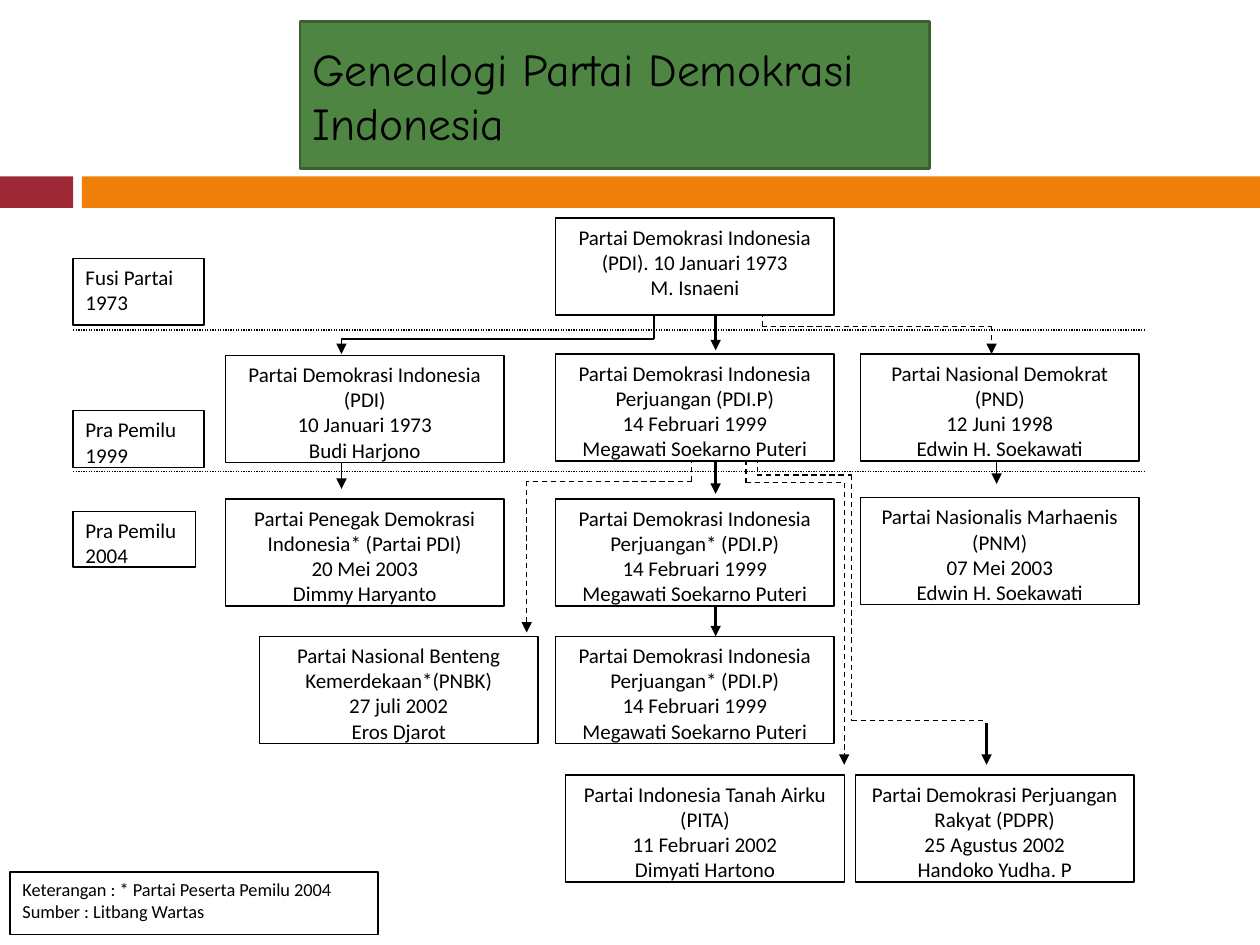
"""Build the genealogy slide of Partai Demokrasi Indonesia."""
from dataclasses import dataclass
from itertools import pairwise

from lxml import etree
from pptx import Presentation
from pptx.dml.color import RGBColor
from pptx.enum.dml import MSO_LINE
from pptx.enum.shapes import MSO_CONNECTOR, MSO_SHAPE
from pptx.enum.text import MSO_ANCHOR, PP_ALIGN
from pptx.oxml.ns import qn
from pptx.util import Inches, Pt

LEFT, CENTER = PP_ALIGN.LEFT, PP_ALIGN.CENTER
TOP, MIDDLE = MSO_ANCHOR.TOP, MSO_ANCHOR.MIDDLE
DASH, DOT = MSO_LINE.DASH, MSO_LINE.ROUND_DOT
RECTANGLE, STRAIGHT = MSO_SHAPE.RECTANGLE, MSO_CONNECTOR.STRAIGHT


@dataclass(frozen=True)
class Theme:
    """Colours, fonts, type sizes and line widths."""
    black: str = "000000"
    white: str = "FFFFFF"
    green: str = "4E8542"
    dark_green: str = "3A6231"
    red: str = "9F2936"
    orange: str = "F07F09"
    body_font: str = "Calibri"
    title_font: str = "Comic Neue"
    title_size: float = 26
    body_size: float = 12
    note_size: float = 10.5
    thin: float = 0.75
    title_line: float = 1.5
    thick: float = 1.75


THEME = Theme()


@dataclass(frozen=True)
class Box:
    """A rectangle with its paragraphs."""
    left: float
    top: float
    width: float
    height: float
    lines: tuple[str, ...] = ()
    fill: str = THEME.white
    outline: str | None = THEME.black
    weight: float = THEME.thin
    font: str = THEME.body_font
    size: float = THEME.body_size
    align: PP_ALIGN = LEFT
    anchor: MSO_ANCHOR = TOP
    space_after: float = 0


@dataclass(frozen=True)
class Route:
    """A chain of straight lines through points."""
    points: tuple[tuple[float, float], ...]
    weight: float = THEME.thin
    dash: MSO_LINE | None = None
    arrow: bool = True


def party(left: float, top: float, *lines: str, height: float = 0.85) -> Box:
    """Return the box of one party."""
    return Box(left, top, 2.21, height, lines, align=CENTER)


def label(top: float, width: float, height: float, text: str) -> Box:
    """Return the box of one period."""
    return Box(0.58, top, width, height, (text,), space_after=10)


def apply_format(target: object, values: dict) -> None:
    """Set each attribute of the target."""
    for name, value in values.items():
        setattr(target, name, value)


def add_box(slide, box: Box) -> None:
    """Draw a box with its text."""
    shape = slide.shapes.add_shape(
        RECTANGLE, *map(Inches, (box.left, box.top, box.width, box.height)))
    shape.shadow.inherit = False
    shape.fill.solid()
    shape.fill.fore_color.rgb = RGBColor.from_string(box.fill)
    if box.outline:
        shape.line.color.rgb = RGBColor.from_string(box.outline)
        shape.line.width = Pt(box.weight)
    else:
        shape.line.fill.background()
    frame = shape.text_frame
    apply_format(frame, {"word_wrap": True, "vertical_anchor": box.anchor})
    for index, text in enumerate(box.lines):
        paragraph = frame.add_paragraph() if index else frame.paragraphs[0]
        apply_format(paragraph, {"alignment": box.align,
                                 "space_after": Pt(box.space_after)})
        run = paragraph.add_run()
        run.text = text
        apply_format(run.font, {"name": box.font, "size": Pt(box.size)})
        run.font.color.rgb = RGBColor.from_string(THEME.black)


def add_route(slide, route: Route) -> None:
    """Draw a route, with the arrowhead on its last line."""
    for start, end in pairwise(route.points):
        connector = slide.shapes.add_connector(
            STRAIGHT, *map(Inches, (*start, *end)))
        connector.line.color.rgb = RGBColor.from_string(THEME.black)
        apply_format(connector.line, {"width": Pt(route.weight),
                                      "dash_style": route.dash})
        properties = connector.element.spPr
        etree.SubElement(properties, qn("a:effectLst"))
        if route.arrow and end == route.points[-1]:
            line = properties.find(qn("a:ln"))
            etree.SubElement(line, qn("a:tailEnd"), type="triangle")


LEFT_X, MIDDLE_X, RIGHT_X = 1.79, 4.41, 6.83
LEFT_AXIS, MIDDLE_AXIS = 2.71, 5.68
PDI = "Partai Demokrasi Indonesia"
PDIP = (f"{PDI} Perjuangan* (PDI.P)", "14 Februari 1999",
        "Megawati Soekarno Puteri")

HEADER = (
    Box(0, 1.4, 0.58, 0.25, fill=THEME.red, outline=None),
    Box(0.65, 1.4, 9.35, 0.25, fill=THEME.orange, outline=None),
    Box(2.38, 0.17, 5, 1.17, ("Genealogi Partai Demokrasi Indonesia",),
        THEME.green, THEME.dark_green, THEME.title_line, THEME.title_font,
        THEME.title_size, anchor=MIDDLE),
)

ROUTES = (
    Route(((5.49, 3.49), (5.49, 3.82), (4.18, 3.82), (4.18, 5.02)), dash=DASH),
    Route(((6.05, 2.26), (6.05, 2.59), (7.87, 2.59), (7.87, 2.81)), dash=DASH),
    Route(((5.92, 3.51), (5.92, 3.83), (6.7, 3.83), (6.7, 6.07)), dash=DASH),
    Route(((6.01, 3.42), (6.01, 3.77), (6.76, 3.77), (6.76, 5.72),
           (7.82, 5.72)), dash=DASH, arrow=False),
    Route(((5.19, 2.37), (5.19, 2.69), (LEFT_AXIS, 2.69), (LEFT_AXIS, 2.81))),
    Route(((LEFT_AXIS, 3.66), (LEFT_AXIS, 3.88))),
    Route(((7.91, 3.66), (7.91, 3.84))),
    Route(((7.83, 5.74), (7.83, 6.07)), THEME.thick),
    *(Route(((MIDDLE_AXIS, top), (MIDDLE_AXIS, bottom)), THEME.thick)
      for top, bottom in ((2.5, 2.78), (3.66, 3.92), (4.8, 5.05))),
    *(Route(((0.58, y), (9.08, y)), dash=DOT, arrow=False)
      for y in (2.62, 3.74)),
)

BOXES = (
    label(2.05, 1.04, 0.53, "Fusi Partai 1973"),
    label(3.26, 1.04, 0.45, "Pra Pemilu 1999"),
    label(4.06, 0.97, 0.44, "Pra Pemilu 2004"),
    party(MIDDLE_X, 1.73, PDI, "(PDI). 10 Januari 1973", "M. Isnaeni",
          height=0.77),
    party(LEFT_X, 2.82, PDI, "(PDI)", "10 Januari 1973", "Budi Harjono"),
    party(MIDDLE_X, 2.81, PDIP[0].replace("*", ""), *PDIP[1:]),
    party(RIGHT_X, 2.81, "Partai Nasional Demokrat (PND)", "12 Juni 1998",
          "Edwin H. Soekawati"),
    party(LEFT_X, 3.96, "Partai Penegak Demokrasi Indonesia* (Partai PDI)",
          "20 Mei 2003", "Dimmy Haryanto"),
    party(MIDDLE_X, 3.96, *PDIP),
    party(RIGHT_X, 3.95, "Partai Nasionalis Marhaenis (PNM)", "07 Mei 2003",
          "Edwin H. Soekawati"),
    party(2.06, 5.05, "Partai Nasional Benteng Kemerdekaan*(PNBK)",
          "27 juli 2002", "Eros Djarot"),
    party(MIDDLE_X, 5.05, *PDIP),
    party(4.49, 6.15, "Partai Indonesia Tanah Airku (PITA)",
          "11 Februari 2002", "Dimyati Hartono"),
    party(6.79, 6.15, "Partai Demokrasi Perjuangan Rakyat (PDPR)",
          "25 Agustus 2002", "Handoko Yudha. P"),
    Box(0.08, 6.92, 2.92, 0.5,
        ("Keterangan : * Partai Peserta Pemilu 2004",
         "Sumber : Litbang Wartas"), size=THEME.note_size),
)


def main() -> None:
    """Build and save the presentation."""
    presentation = Presentation()
    apply_format(presentation, {"slide_width": Inches(10),
                                "slide_height": Inches(7.5)})
    slide = presentation.slides.add_slide(presentation.slide_layouts[6])
    for box in HEADER:
        add_box(slide, box)
    for route in ROUTES:
        add_route(slide, route)
    for box in BOXES:
        add_box(slide, box)
    presentation.save("out.pptx")


if __name__ == "__main__":
    main()
